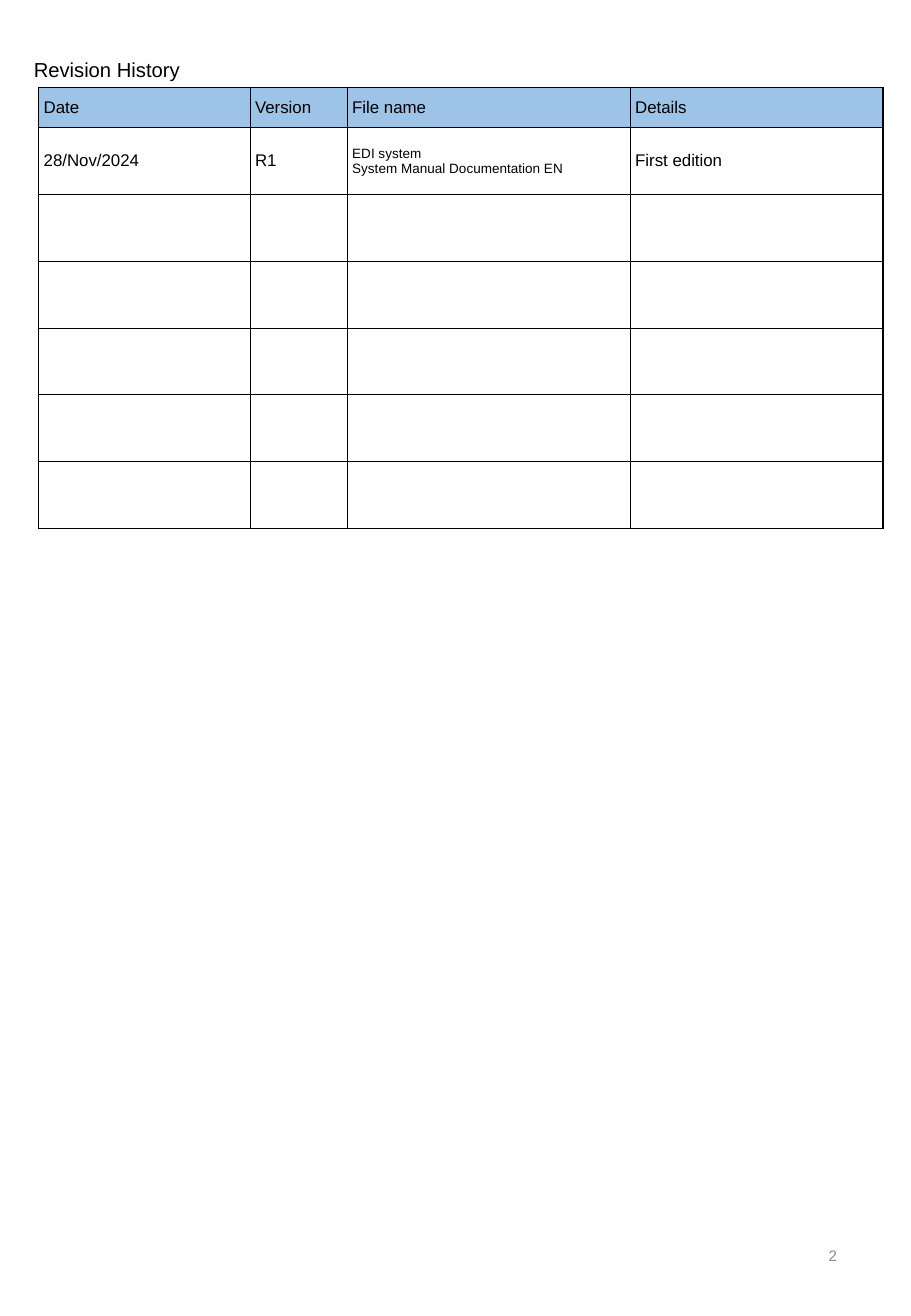
from lxml import etree
from pptx import Presentation
from pptx.dml.color import RGBColor
from pptx.enum.text import MSO_ANCHOR, PP_ALIGN
from pptx.oxml.ns import qn
from pptx.util import Inches, Pt

# Content
TITLE = "Revision History"
PAGE_NUMBER = "2"
HEADERS = ["Date", "Version", "File name", "Details"]
REVISIONS = [
    ["28/Nov/2024", "R1", "EDI system\nSystem Manual Documentation EN", "First edition"],
]
EMPTY_ROWS = 5

# Style
FONT = "Arial"
BLACK = RGBColor(0x00, 0x00, 0x00)
GRAY = RGBColor(0x8C, 0x8C, 0x8C)
HEADER_BLUE = RGBColor(0x9D, 0xC3, 0xE6)
MIDDLE = MSO_ANCHOR.MIDDLE
LEFT, RIGHT = PP_ALIGN.LEFT, PP_ALIGN.RIGHT
COL_WIDTHS = [1.74, 0.8, 2.33, 2.08]
HEADER_HEIGHT, ROW_HEIGHT = 0.33, 0.55


def write(tf, text, size, color=BLACK, align=LEFT):
    for i, line in enumerate(text.split("\n")):
        p = tf.paragraphs[0] if i == 0 else tf.add_paragraph()
        p.alignment = align
        r = p.add_run()
        r.text = line
        r.font.name = FONT
        r.font.size = Pt(size)
        r.font.color.rgb = color


def add_text(slide, box, text, size, color=BLACK, align=LEFT):
    tf = slide.shapes.add_textbox(*map(Inches, box)).text_frame
    tf.word_wrap = True
    tf.vertical_anchor = MIDDLE
    write(tf, text, size, color, align)
    return tf


def add_borders(cell):
    tc_pr = cell._tc.get_or_add_tcPr()
    for side in ("a:lnL", "a:lnR", "a:lnT", "a:lnB"):
        ln = etree.SubElement(tc_pr, qn(side), w=str(Pt(0.75)))
        fill = etree.SubElement(ln, qn("a:solidFill"))
        etree.SubElement(fill, qn("a:srgbClr"), val=str(BLACK))


def style_cell(cell, is_header):
    cell.vertical_anchor = MIDDLE
    cell.margin_left = Inches(0.04)
    cell.margin_right = Inches(0.1)
    cell.margin_top = cell.margin_bottom = Inches(0.05)
    add_borders(cell)
    if is_header:
        cell.fill.solid()
        cell.fill.fore_color.rgb = HEADER_BLUE
    else:
        cell.fill.background()


def add_history(slide, left, top):
    rows = [HEADERS] + REVISIONS + [[""] * len(HEADERS)] * EMPTY_ROWS
    heights = [HEADER_HEIGHT] + [ROW_HEIGHT] * (len(rows) - 1)
    box = (left, top, sum(COL_WIDTHS), sum(heights))
    table = slide.shapes.add_table(len(rows), len(HEADERS), *map(Inches, box)).table
    table.first_row = table.horz_banding = False
    for col, width in zip(table.columns, COL_WIDTHS):
        col.width = Inches(width)
    for i, (values, height) in enumerate(zip(rows, heights)):
        table.rows[i].height = Inches(height)
        for j, value in enumerate(values):
            cell = table.cell(i, j)
            style_cell(cell, i == 0)
            if value:
                write(cell.text_frame, value, 8 if "\n" in value else 10)


def main():
    prs = Presentation()
    prs.slide_width, prs.slide_height = Inches(7.5), Inches(10.83)
    slide = prs.slides.add_slide(prs.slide_layouts[6])

    # Title
    tf = add_text(slide, (0.12, 0.42, 1.56, 0.3), TITLE, 12)
    tf.paragraphs[0]._p.get_or_add_pPr().set("indent", str(Inches(0.06)))

    # Revision table
    add_history(slide, 0.32, 0.72)

    # Page number
    add_text(slide, (5.3, 10.04, 1.69, 0.58), PAGE_NUMBER, 9, GRAY, RIGHT)

    prs.save("out.pptx")


if __name__ == "__main__":
    main()
